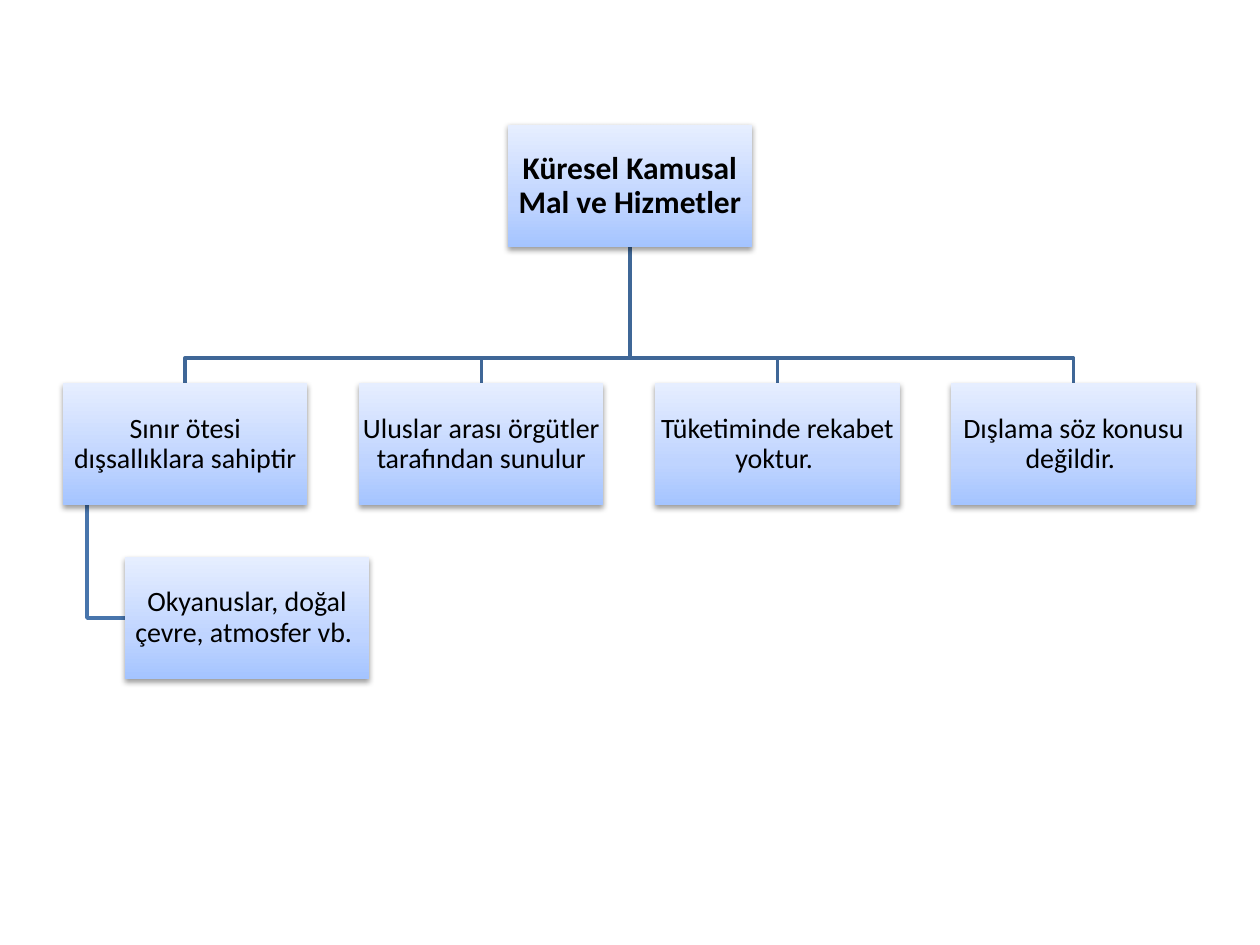
from pptx import Presentation
from pptx.dml.color import RGBColor
from pptx.enum.shapes import MSO_SHAPE as Shape
from pptx.enum.text import MSO_ANCHOR as Anchor, PP_ALIGN as Align
from pptx.oxml import parse_xml
from pptx.util import Inches, Pt

BLACK = RGBColor(0x00, 0x00, 0x00)
TRUNK = RGBColor(0x3F, 0x67, 0x97)
TWIG = RGBColor(0x48, 0x75, 0xAC)
STOPS = [(0, RGBColor(0xA4, 0xC4, 0xFF)), (35, RGBColor(0xBF, 0xD4, 0xFF)),
         (100, RGBColor(0xE6, 0xEE, 0xFF))]
NS = 'xmlns:a="http://schemas.openxmlformats.org/drawingml/2006/main"'

# Grid in inches: four columns, three rows
WIDE, HIGH = 1.94, 0.97
LEFT, STEP = 0.5, 2.35
TOP, MID, LOW = 0.99, 3.04, 4.42
CENTER = 5
BUS = MID - 0.2
STEM, CHILD = 0.69, 0.99

deck = Presentation()
deck.slide_width, deck.slide_height = Inches(10), Inches(7.5)
slide = deck.slides.add_slide(deck.slide_layouts[6])


def draw_path(points, color):
    points = [(Inches(x), Inches(y)) for x, y in points]
    pen = slide.shapes.build_freeform(*points[0])
    pen.add_line_segments(points[1:], close=False)
    path = pen.convert_to_shape()
    path.fill.background()
    path.line.color.rgb = color
    path.line.width = Pt(2)
    path.shadow.inherit = False


def draw_box(x, y, text, size=16, bold=False):
    box = slide.shapes.add_shape(Shape.RECTANGLE, *map(Inches, (x, y, WIDE, HIGH)))
    # Gradient fill, then a soft shadow below
    stops = "".join(f'<a:gs pos="{at * 1000}"><a:srgbClr val="{color}"/></a:gs>'
                    for at, color in STOPS)
    box.element.spPr.append(parse_xml(
        f'<a:gradFill {NS} rotWithShape="1"><a:gsLst>{stops}</a:gsLst>'
        '<a:lin ang="16200000" scaled="0"/></a:gradFill>'))
    box.line.fill.background()
    box.element.spPr.append(parse_xml(
        f'<a:effectLst {NS}><a:outerShdw blurRad="40000" dist="20000" dir="5400000"'
        ' rotWithShape="0"><a:srgbClr val="000000"><a:alpha val="38000"/>'
        '</a:srgbClr></a:outerShdw></a:effectLst>'))
    # Centred text
    frame = box.text_frame
    inset = Inches(0.01)
    looks = dict(word_wrap=True, vertical_anchor=Anchor.MIDDLE, margin_left=inset,
                 margin_right=inset, margin_top=inset, margin_bottom=inset)
    for name, value in looks.items():
        setattr(frame, name, value)
    para = frame.paragraphs[0]
    para.alignment, para.line_spacing = Align.CENTER, 0.9
    run = para.add_run()
    run.text = text
    for name, value in dict(name="Calibri", size=Pt(size), bold=bold).items():
        setattr(run.font, name, value)
    run.font.color.rgb = BLACK


# Branches behind the boxes
for col in range(4):
    x = LEFT + col * STEP + WIDE / 2
    draw_path([(CENTER, TOP + HIGH), (CENTER, BUS), (x, BUS), (x, MID)], TRUNK)
low_mid = LOW + HIGH / 2
draw_path([(STEM, MID + HIGH), (STEM, low_mid), (CHILD, low_mid)], TWIG)

# Root, traits and example
draw_box(CENTER - WIDE / 2, TOP, "Küresel Kamusal Mal ve Hizmetler", 18, True)
traits = ["Sınır ötesi dışsallıklara sahiptir",
          "Uluslar arası örgütler tarafından sunulur",
          "Tüketiminde rekabet yoktur. ",
          "Dışlama söz konusu değildir. "]
for col, text in enumerate(traits):
    draw_box(LEFT + col * STEP, MID, text)
draw_box(CHILD, LOW, "Okyanuslar, doğal çevre, atmosfer vb. ")

deck.save("out.pptx")
